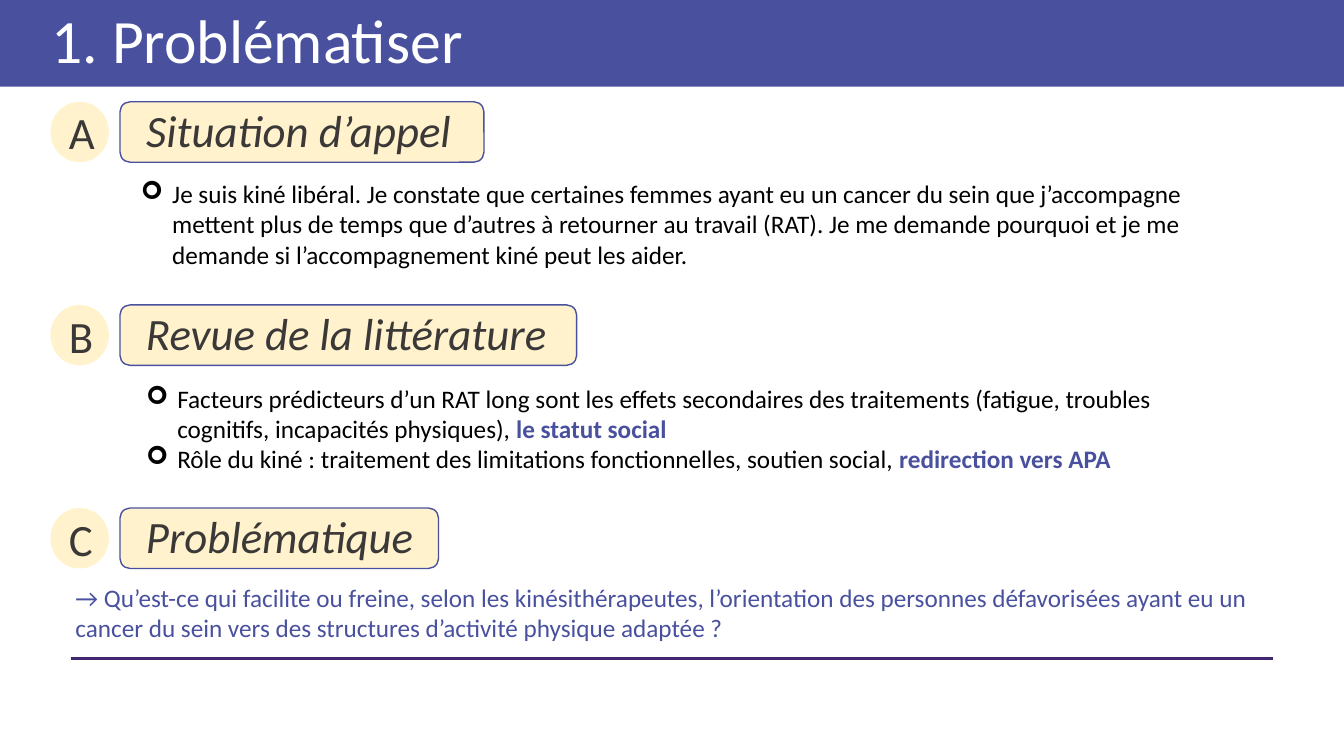
from lxml import etree
from pptx import Presentation
from pptx import util as u
from pptx.dml.color import RGBColor
from pptx.enum import shapes, text
from pptx.oxml.ns import qn

PX = 9144  # EMU per px, 100 px to the inch
FONT = "Calibri"
BLUE = RGBColor(0x49, 0x51, 0x9E)
PURPLE = RGBColor(0x41, 0x26, 0x72)
CREAM = RGBColor(0xFF, 0xF2, 0xCC)
GREY = RGBColor(0x3B, 0x38, 0x38)
BLACK = RGBColor(0, 0, 0)
WHITE = RGBColor(0xFF, 0xFF, 0xFF)

HEADING_TOP, HEADING_STEP = 101, 201.5
HEADINGS = [("A", "Situation d’appel", 361),
            ("B", "Revue de la littérature", 453),
            ("C", "Problématique", 316)]
SITUATION = [[("Je suis kiné libéral. Je constate que certaines femmes ayant eu un cancer du "
               "sein que j’accompagne mettent plus de temps que d’autres à retourner au travail "
               "(RAT). Je me demande pourquoi et je me demande si l’accompagnement kiné peut "
               "les aider.", False)]]
REVIEW = [[("Facteurs prédicteurs d’un RAT long sont les effets secondaires des traitements "
            "(fatigue, troubles cognitifs, incapacités physiques), ", False),
           ("le statut social", True)],
          [("Rôle du kiné : traitement des limitations fonctionnelles, soutien social, ", False),
           ("redirection vers APA", True)]]
QUESTION = ("→ Qu’est-ce qui facilite ou freine, selon les kinésithérapeutes, l’orientation des "
            "personnes défavorisées ayant eu un cancer du sein vers des structures d’activité "
            "physique adaptée ?")


def px(*lengths):
    return [u.Emu(round(n * PX)) for n in lengths]


def add_run(p, words, size=18, color=BLACK, bold=False, italic=False):
    r = p.add_run()
    r.text = words
    f = r.font
    f.name, f.size, f.bold, f.italic = FONT, u.Pt(size), bold, italic
    f.color.rgb = color


def add_box(s, box):
    tf = s.shapes.add_textbox(*px(*box)).text_frame
    tf.word_wrap = True
    return tf


def add_panel(s, kind, box, line=None):
    sp = s.shapes.add_shape(kind, *px(*box))
    sp.shadow.inherit = False
    sp.fill.solid()
    sp.fill.fore_color.rgb = CREAM
    if line is None:
        sp.line.fill.background()
    else:
        sp.line.color.rgb = line
        sp.line.width = u.Pt(1)
    return sp


def add_title(s, box, words):
    sp = s.shapes.title
    sp.left, sp.top, sp.width, sp.height = px(*box)
    sp.fill.solid()
    sp.fill.fore_color.rgb = BLUE
    tf = sp.text_frame
    tf.auto_size = text.MSO_AUTO_SIZE.NONE
    tf.vertical_anchor = text.MSO_ANCHOR.MIDDLE
    tf.margin_left, = px(51)
    p = tf.paragraphs[0]
    p.alignment = text.PP_ALIGN.LEFT
    p.line_spacing = 0.9
    add_run(p, words, size=44, color=WHITE)


def add_heading(s, box, letter, words):
    """Lettered disc, then a rounded label that fills the rest of the box."""
    x, y, w, h = box
    disc = add_panel(s, shapes.MSO_SHAPE.OVAL, (x, y, 58, h))
    tf = disc.text_frame
    tf.vertical_anchor = text.MSO_ANCHOR.MIDDLE
    tf.paragraphs[0].alignment = text.PP_ALIGN.CENTER
    add_run(tf.paragraphs[0], letter, size=32, color=GREY)
    add_panel(s, shapes.MSO_SHAPE.ROUNDED_RECTANGLE, (x + 69, y, w - 69, h), BLUE)
    label = add_box(s, (x + 85, y - 4, w - 69, 64))
    add_run(label.paragraphs[0], words, size=32, color=GREY, italic=True)


def add_bullets(s, box, items):
    """Arrow-bulleted list; each item is a list of (words, is_key) pieces."""
    tf = add_box(s, box)
    indent, = px(31)
    for i, pieces in enumerate(items):
        p = tf.add_paragraph() if i else tf.paragraphs[0]
        pPr = p._p.get_or_add_pPr()
        pPr.set("marL", str(indent))
        pPr.set("indent", str(-indent))
        etree.SubElement(pPr, qn("a:buFont"), typeface="Wingdings")
        etree.SubElement(pPr, qn("a:buChar"), char="➢")
        for words, is_key in pieces:
            add_run(p, words, color=BLUE if is_key else BLACK, bold=is_key)


def add_rule(s, x, y, w):
    c = s.shapes.add_connector(shapes.MSO_CONNECTOR.STRAIGHT, *px(x, y, x + w, y))
    c.line.color.rgb = PURPLE
    c.line.width = u.Pt(2.25)
    etree.SubElement(c._element.spPr, qn("a:effectLst"))


def main():
    prs = Presentation()
    prs.slide_width, prs.slide_height = px(1333, 750)
    s = prs.slides.add_slide(prs.slide_layouts[5])
    add_rule(s, 70, 653, 1193)
    add_title(s, (0, 0, 1333, 86), "1. Problématiser")
    for i, (letter, words, width) in enumerate(HEADINGS):
        add_heading(s, (50, HEADING_TOP + i * HEADING_STEP, 69 + width, 60), letter, words)
    add_bullets(s, (130, 172, 1081, 101), SITUATION)
    add_bullets(s, (135, 375, 1081, 131), REVIEW)
    add_run(add_box(s, (65, 573, 1203, 71)).paragraphs[0], QUESTION, color=BLUE)
    prs.save("out.pptx")


if __name__ == "__main__":
    main()
